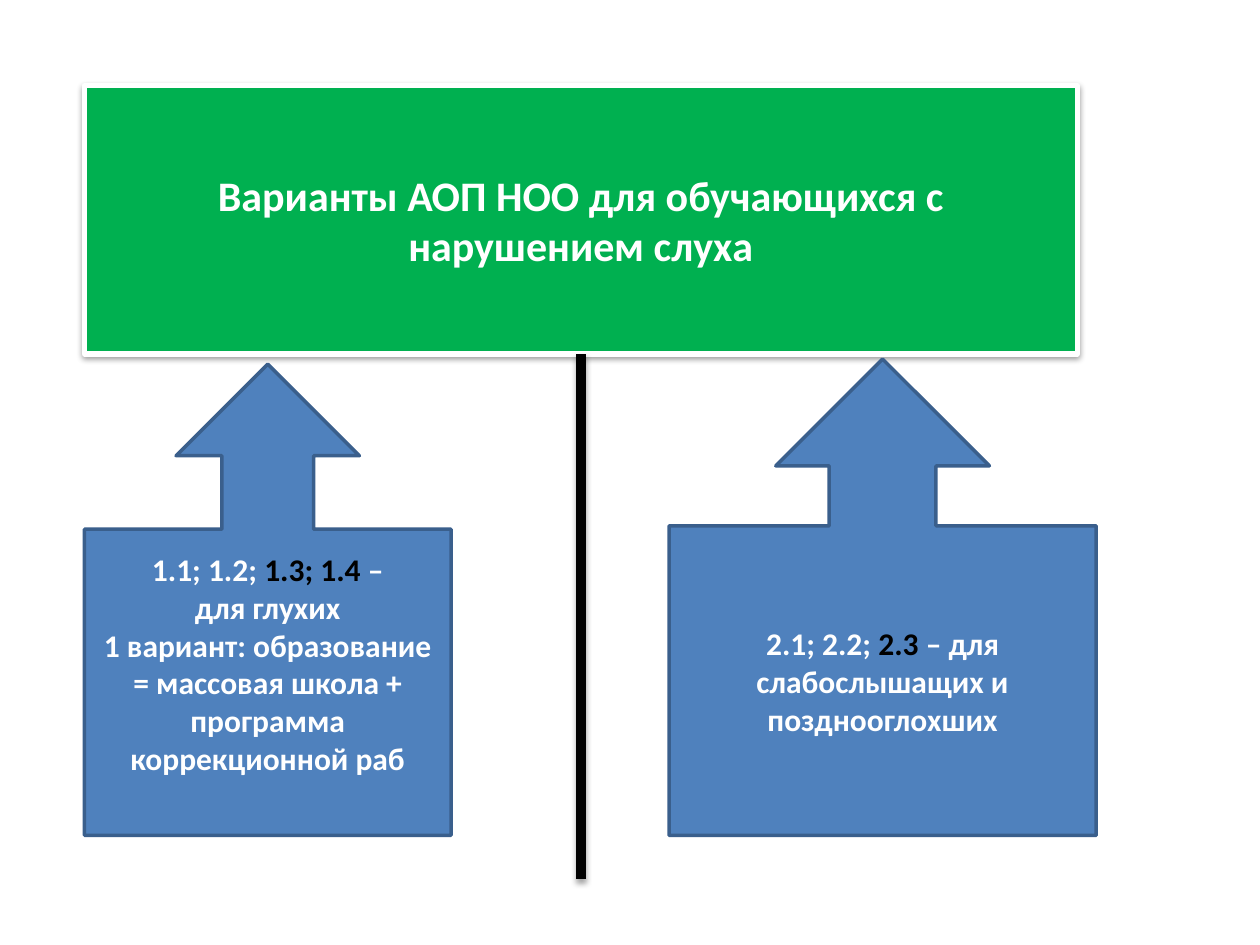
from lxml import etree
from pptx import Presentation
from pptx.dml.color import RGBColor
from pptx.enum.shapes import MSO_CONNECTOR, MSO_SHAPE
from pptx.enum.text import MSO_ANCHOR, PP_ALIGN
from pptx.oxml.ns import qn
from pptx.util import Inches, Pt

WHITE, BLACK, GREEN, BLUE, NAVY = "FFFFFF", "000000", "00B050", "4F81BD", "3A5F8C"


def add_text(tf, paragraphs, size=18, font="Calibri", bold=True, bottom=0.05):
    """Fill a frame with paragraphs, each a list of (text, colour) runs."""
    tf.word_wrap = True
    tf.vertical_anchor = MSO_ANCHOR.MIDDLE
    tf.margin_bottom = Inches(bottom)
    for i, runs in enumerate(paragraphs):
        p = tf.paragraphs[0] if i == 0 else tf.add_paragraph()
        p.alignment = PP_ALIGN.CENTER
        for text, color in runs:
            r = p.add_run()
            r.text = text
            r.font.size, r.font.name, r.font.bold = Pt(size), font, bold
            r.font.color.rgb = RGBColor.from_string(color)


def add_shadow(sp, alpha, dist):
    """Give a shape or connector a soft black shadow straight below it."""
    effects = etree.SubElement(sp._element.spPr, qn("a:effectLst"))
    outer = etree.SubElement(effects, qn("a:outerShdw"), blurRad=str(Pt(3.1)),
                             dist=str(Pt(dist)), dir="5400000", rotWithShape="0")
    color = etree.SubElement(outer, qn("a:srgbClr"), val=BLACK)
    etree.SubElement(color, qn("a:alpha"), val=str(alpha * 1000))


prs = Presentation()
prs.slide_width, prs.slide_height = Inches(10), Inches(7.5)
s = prs.slides.add_slide(prs.slide_layouts[6])

# Title banner
banner = s.shapes.add_shape(MSO_SHAPE.RECTANGLE, Inches(0.67), Inches(0.68),
                            Inches(7.88), Inches(2.13))
banner.fill.solid()
banner.fill.fore_color.rgb = RGBColor.from_string(GREEN)
banner.line.color.rgb = RGBColor.from_string(WHITE)
banner.line.width = Pt(3)
add_shadow(banner, alpha=38, dist=1.6)
add_text(banner.text_frame,
         [[("Варианты АОП НОО для обучающихся с нарушением слуха", WHITE)]], size=24)

# Callouts pointing up at the banner; a larger bottom inset lifts the left text
deaf = [
    [("1.1; 1.2; ", WHITE), ("1.3; 1.4 ", BLACK), ("–", WHITE)],
    [("для глухих", WHITE)],
    [("1 вариант: образование = массовая школа + программа коррекционной раб", WHITE)],
]
hard_of_hearing = [
    [("2.1; 2.2; ", WHITE), ("2.3", BLACK),
     (" – для слабослышащих и позднооглохших", WHITE)],
]
callout_bottom = 6.63
for left, top, width, paragraphs, inset in [
    (0.67, 2.89, 2.91, deaf, 0.35),
    (5.31, 2.85, 3.39, hard_of_hearing, 0.05),
]:
    sp = s.shapes.add_shape(MSO_SHAPE.UP_ARROW_CALLOUT, Inches(left), Inches(top),
                            Inches(width), Inches(callout_bottom - top))
    sp.shadow.inherit = False
    sp.fill.solid()
    sp.fill.fore_color.rgb = RGBColor.from_string(BLUE)
    sp.line.color.rgb = RGBColor.from_string(NAVY)
    sp.line.width = Pt(2)
    add_text(sp.text_frame, paragraphs, bottom=inset)

# Divider hanging from the middle of the banner
divider = s.shapes.add_connector(MSO_CONNECTOR.STRAIGHT, Inches(4.61), Inches(2.81),
                                 Inches(4.61), Inches(6.98))
divider.begin_connect(banner, 2)
divider.line.color.rgb = RGBColor.from_string(BLACK)
divider.line.width = Pt(6)
add_shadow(divider, alpha=35, dist=1.8)

prs.save("out.pptx")
